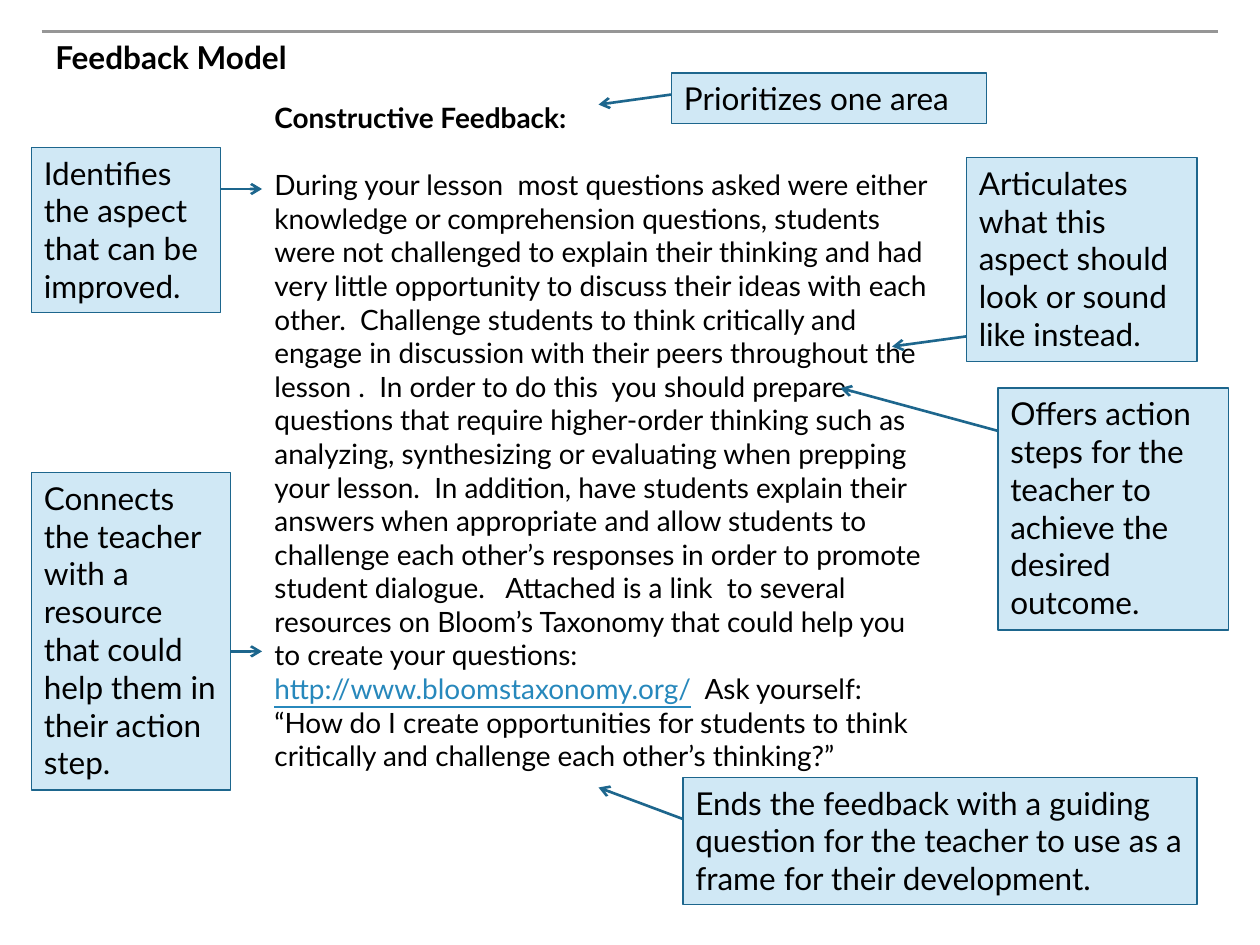
from typing import NamedTuple

from lxml.etree import SubElement
from pptx import Presentation
from pptx.dml.color import RGBColor
from pptx.enum.shapes import MSO_CONNECTOR, MSO_SHAPE
from pptx.enum.text import MSO_ANCHOR, MSO_AUTO_SIZE, PP_ALIGN
from pptx.oxml.ns import qn
from pptx.util import Inches, Pt

FONT = "Lato"
BLACK = RGBColor(0x00, 0x00, 0x00)
RULE_GRAY = RGBColor(0x96, 0x96, 0x96)
DARK_BLUE = RGBColor(0x1D, 0x66, 0x8D)
PALE_BLUE = RGBColor(0xD0, 0xE8, 0xF5)
LINK_BLUE = RGBColor(0x27, 0x88, 0xBC)


class Point(NamedTuple):
    x: float
    y: float


class Box(NamedTuple):
    left: float
    top: float
    width: float
    height: float


class Callout(NamedTuple):
    note: str
    box: Box
    arrow_start: Point
    arrow_tip: Point


CALLOUTS = [
    Callout("Prioritizes one area",
            Box(5.33, 0.58, 2.5, 0.4), Point(5.33, 0.75), Point(4.75, 0.83)),
    Callout("Identifies the aspect that can be improved.",
            Box(0.25, 1.17, 1.5, 1.31), Point(1.67, 1.5), Point(2.08, 1.5)),
    Callout("Articulates what this aspect should look or sound like instead.",
            Box(7.67, 1.25, 1.83, 1.62), Point(7.67, 2.67), Point(7.08, 2.75)),
    Callout("Offers action steps for the teacher to achieve the desired outcome.",
            Box(7.92, 3.08, 1.83, 1.92), Point(7.92, 3.42), Point(6.67, 3.08)),
    Callout("Connects the teacher with a resource that could help them "
            "in their action step.",
            Box(0.25, 3.75, 1.58, 2.52), Point(1.67, 5.17), Point(2.08, 5.17)),
    Callout("Ends the feedback with a guiding question for the teacher "
            "to use as a frame for their development.",
            Box(5.42, 6.17, 4.08, 1.01), Point(5.42, 6.5), Point(4.75, 6.25)),
]

BEFORE_LINK = (
    "During your lesson  most questions asked were either knowledge or "
    "comprehension questions, students were not challenged to explain their "
    "thinking and had very little opportunity to discuss their ideas with each "
    "other.  Challenge students to think critically and engage in discussion "
    "with their peers throughout the lesson .  In order to do this  you should "
    "prepare questions that require higher-order thinking such as analyzing, "
    "synthesizing or evaluating when prepping your lesson.  In addition, have "
    "students explain their answers when appropriate and allow students to "
    "challenge each other’s responses in order to promote student dialogue.   "
    "Attached is a link  to several resources on Bloom’s Taxonomy that could "
    "help you to create your questions: "
)
LINK = "http://www.bloomstaxonomy.org/"
AFTER_LINK = (
    "  Ask yourself:  “How do I create opportunities for students to think "
    "critically and challenge each other’s thinking?”"
)


def style(paragraph, size: int, bold: bool = False) -> None:
    paragraph.alignment = PP_ALIGN.LEFT
    font = paragraph.font
    font.name, font.size, font.bold = FONT, Pt(size), bold
    font.color.rgb = BLACK


def prepare_frame(shape):
    frame = shape.text_frame
    frame.word_wrap = True
    frame.vertical_anchor = MSO_ANCHOR.TOP
    return frame


def add_text_box(slide, box: Box):
    return prepare_frame(slide.shapes.add_textbox(*map(Inches, box)))


def add_line(slide, start: Point, end: Point, color: RGBColor,
             width: float, arrow: bool = False) -> None:
    connector = slide.shapes.add_connector(
        MSO_CONNECTOR.STRAIGHT, *map(Inches, (*start, *end)))
    connector.line.color.rgb = color
    connector.line.width = Pt(width)
    if arrow:
        SubElement(connector.line._get_or_add_ln(), qn("a:tailEnd"), type="arrow")
    SubElement(connector._element.spPr, qn("a:effectLst"))


def add_callout(slide, callout: Callout) -> None:
    add_line(slide, callout.arrow_start, callout.arrow_tip, DARK_BLUE, 1.5, arrow=True)
    panel = slide.shapes.add_shape(MSO_SHAPE.RECTANGLE, *map(Inches, callout.box))
    panel.shadow.inherit = False
    panel.fill.solid()
    panel.fill.fore_color.rgb = PALE_BLUE
    panel.line.color.rgb = DARK_BLUE
    panel.line.width = Pt(0.75)
    frame = prepare_frame(panel)
    frame.auto_size = MSO_AUTO_SIZE.SHAPE_TO_FIT_TEXT
    frame.text = callout.note
    style(frame.paragraphs[0], 18)


def add_feedback(slide) -> None:
    frame = add_text_box(slide, Box(2.08, 0.75, 5.42, 5.76))
    frame.auto_size = MSO_AUTO_SIZE.SHAPE_TO_FIT_TEXT
    heading = frame.paragraphs[0]
    heading.text = "Constructive Feedback:"
    style(heading, 16, bold=True)

    body = frame.add_paragraph()
    body.space_before = Pt(19.2)
    style(body, 16)
    for wording in (BEFORE_LINK, LINK, AFTER_LINK):
        run = body.add_run()
        run.text = wording
        if wording == LINK:
            run.font.color.rgb = LINK_BLUE
            run.font.underline = True


def main() -> None:
    presentation = Presentation()
    presentation.slide_width, presentation.slide_height = Inches(10), Inches(7.5)
    slide = presentation.slides.add_slide(presentation.slide_layouts[6])

    # Header rule and title
    add_line(slide, Point(0.33, 0.25), Point(9.67, 0.25), RULE_GRAY, 2)
    title = add_text_box(slide, Box(0.34, 0.25, 9.32, 0.58))
    title.text = "Feedback Model"
    style(title.paragraphs[0], 18, bold=True)

    # Sample feedback with its annotations
    add_feedback(slide)
    for callout in CALLOUTS:
        add_callout(slide, callout)

    presentation.save("out.pptx")


if __name__ == "__main__":
    main()
